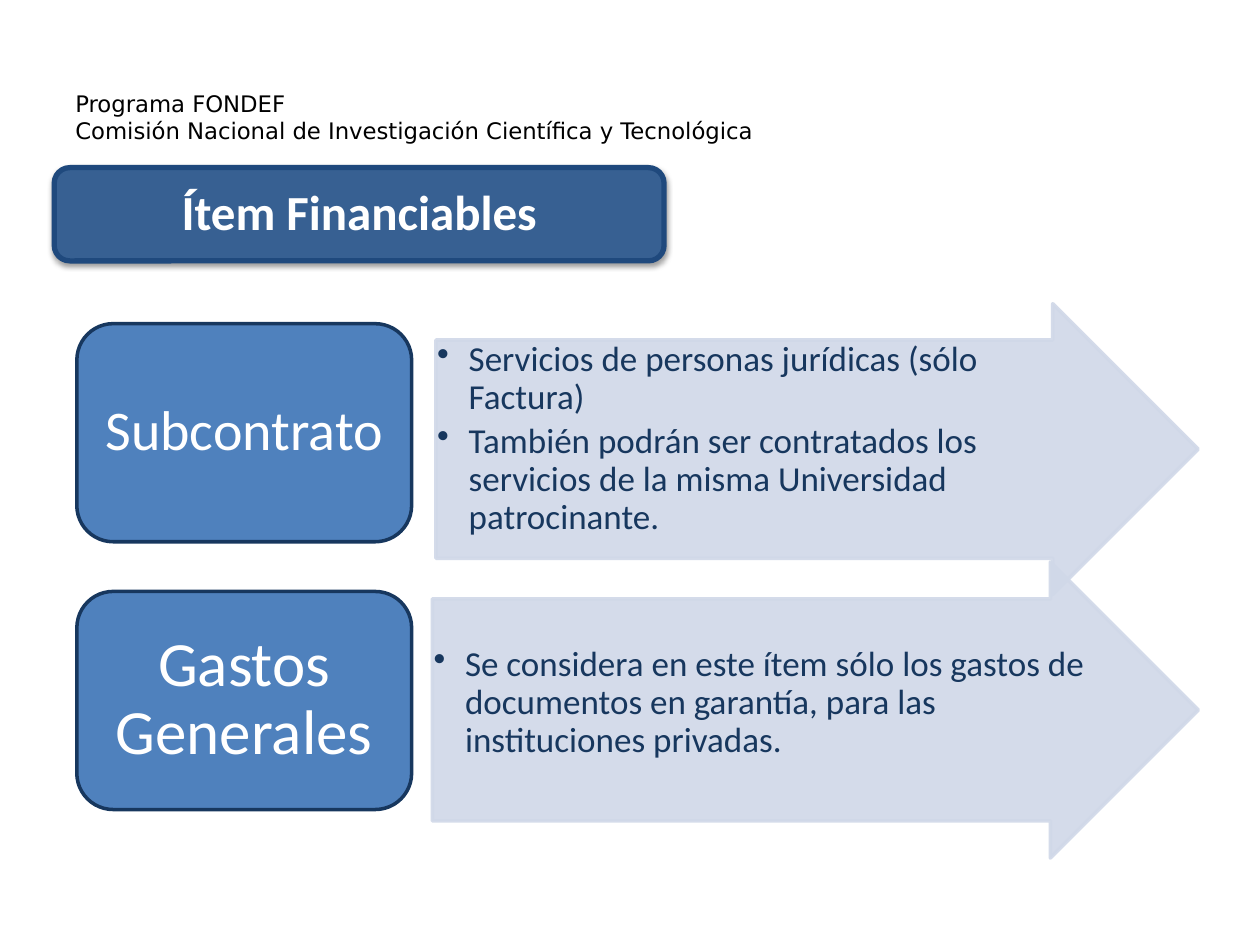
from lxml.etree import SubElement
from pptx import Presentation
from pptx.dml.color import RGBColor
from pptx.enum.shapes import MSO_SHAPE
from pptx.enum.text import MSO_ANCHOR, PP_ALIGN
from pptx.oxml.ns import qn
from pptx.util import Pt

NAVY, BLUE, PALE, WHITE = "17375E", "4F81BD", "D0D8E8", "FFFFFF"


def color(hex_code):
    return RGBColor.from_string(hex_code)


def add_bullet(paragraph, indent=18):
    properties = paragraph._p.get_or_add_pPr()
    properties.set("marL", str(Pt(indent)))
    properties.set("indent", str(-Pt(indent)))
    SubElement(properties, qn("a:buChar"), char="•")


def write(frame, lines, *, size, ink, font="Calibri", bold=False, bullets=False,
          align=PP_ALIGN.LEFT, anchor=MSO_ANCHOR.MIDDLE, spacing=0.9, after=0,
          insets=(7.2, 3.6, 7.2, 3.6)):
    """Fill a text frame, one paragraph per line; insets run left, top, right, bottom."""
    frame.word_wrap = True
    frame.vertical_anchor = anchor
    (frame.margin_left, frame.margin_top,
     frame.margin_right, frame.margin_bottom) = map(Pt, insets)
    for index, line in enumerate(lines):
        paragraph = frame.add_paragraph() if index else frame.paragraphs[0]
        if bullets:
            add_bullet(paragraph)
        paragraph.alignment = align
        paragraph.line_spacing = spacing
        paragraph.space_after = Pt(after)
        run = paragraph.add_run()
        run.text = line
        run.font.name = font
        run.font.size = Pt(size)
        run.font.bold = bold
        run.font.color.rgb = color(ink)


class SlideBuilder:
    def __init__(self, slide):
        self.slide = slide

    def panel(self, kind, box, fill, line, width):
        shape = self.slide.shapes.add_shape(kind, *map(Pt, box))
        shape.shadow.inherit = False
        shape.fill.solid()
        shape.fill.fore_color.rgb = color(fill)
        shape.line.color.rgb = color(line)
        shape.line.width = Pt(width)
        return shape

    def heading(self, box, lines):
        heading = self.slide.shapes.add_textbox(*map(Pt, box))
        write(heading.text_frame, lines, size=13, ink="000000",
              font="DejaVu Sans", spacing=1)

    def banner(self, box, title):
        banner = self.panel(MSO_SHAPE.ROUNDED_RECTANGLE, box, "376092", "1F497D", 3)
        effects = banner._element.spPr.find(qn("a:effectLst"))
        shadow = SubElement(effects, qn("a:outerShdw"), blurRad=str(Pt(3.1)),
                            dist=str(Pt(1.6)), dir="5400000", rotWithShape="0")
        tint = SubElement(shadow, qn("a:srgbClr"), val="000000")
        SubElement(tint, qn("a:alpha"), val="38000")
        write(banner.text_frame, [title], size=28, ink=WHITE, bold=True,
              align=PP_ALIGN.CENTER)

    def item(self, box, name, size):
        item = self.panel(MSO_SHAPE.ROUNDED_RECTANGLE, box, BLUE, NAVY, 2)
        write(item.text_frame, [name], size=size, ink=WHITE,
              align=PP_ALIGN.CENTER, insets=(9.5, 5, 9.5, 5))

    def detail_arrow(self, box, details, top_inset):
        arrow = self.panel(MSO_SHAPE.RIGHT_ARROW, box, PALE, PALE, 2)
        arrow.adjustments[0] = 0.75
        arrow.adjustments[1] = 0.5
        for tint in arrow._element.spPr.iter(qn("a:srgbClr")):
            SubElement(tint, qn("a:alpha"), val="90000")
        write(arrow.text_frame, details, size=20, ink=NAVY, bullets=True,
              anchor=MSO_ANCHOR.TOP, after=3.6, insets=(0.7, top_inset, 0.7, 0.7))


def main():
    presentation = Presentation()
    presentation.slide_width, presentation.slide_height = Pt(720), Pt(540)
    builder = SlideBuilder(presentation.slides.add_slide(presentation.slide_layouts[6]))

    builder.heading((36, 21.6, 562.3, 90), [
        "Programa FONDEF",
        "Comisión Nacional de Investigación Científica y Tecnológica",
    ])
    items = [
        ("Subcontrato", 32, 185, (249.1, 173.5, 435.6, 166.3), 0.7, [
            "Servicios de personas jurídicas (sólo Factura)",
            "También podrán ser contratados los servicios de la misma "
            "Universidad patrocinante.",
        ]),
        ("Gastos Generales", 36, 338, (247, 321.1, 437.8, 169.2), 27, [
            "Se considera en este ítem sólo los gastos de documentos en garantía, "
            "para las instituciones privadas.",
        ]),
    ]
    for name, size, top, arrow_box, top_inset, details in items:
        builder.detail_arrow(arrow_box, details, top_inset)
        builder.item((43.9, top, 191.3, 124.6), name, size)
    builder.banner((31, 95.8, 348.5, 53.3), "Ítem Financiables")

    presentation.save("out.pptx")


if __name__ == "__main__":
    main()
